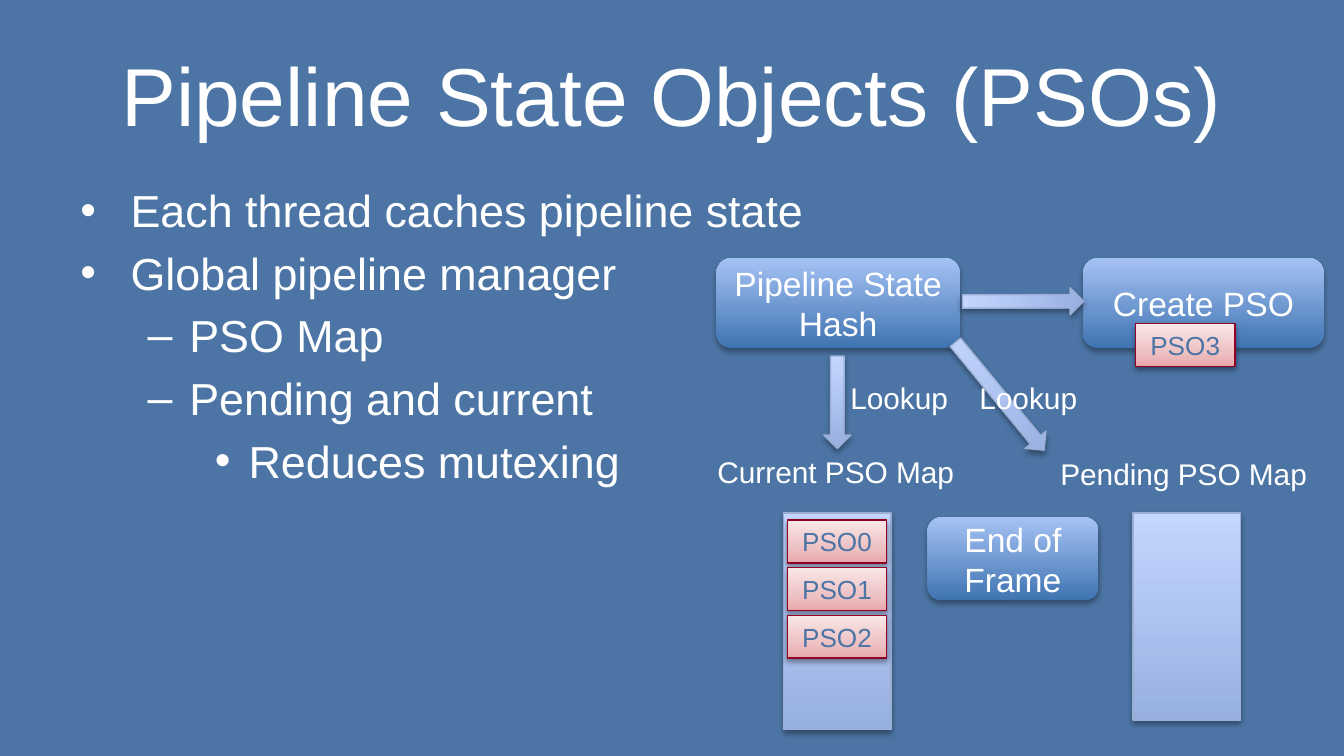
"""Build the slide on pipeline state objects and their lookup flow."""
from copy import deepcopy
from dataclasses import dataclass

from lxml.etree import SubElement
from pptx import Presentation
from pptx.dml.color import RGBColor
from pptx.enum.shapes import MSO_SHAPE as Preset
from pptx.enum.text import MSO_ANCHOR as Anchor, MSO_AUTO_SIZE as AutoSize, PP_ALIGN as Align
from pptx.oxml.ns import qn
from pptx.util import Cm, Pt


@dataclass(frozen=True)
class Look:
    stops: tuple
    line: str = ""
    text: str = "FFFFFF"
    size: int = 18
    shadow_alpha: int = 35
    shadow_distance: float = 1.8


@dataclass(frozen=True)
class Theme:
    font: str = "Arial"
    background: str = "4C75A5"
    text: str = "FFFFFF"
    title_size: int = 44
    body_size: int = 24
    label_size: int = 16
    step: Look = Look(((0, "3F74B2"), (1, "A5C2F4")))
    pale: Look = Look(((0, "98B0E0"), (1, "C4D6FF")), "9BAFD5")
    entry: Look = Look(((0, "E9A7AA"), (0.35, "EEC2C4"), (1, "F9E7E8")),
                       "920025", "4C75A5", 14, 38, 1.6)


THEME = Theme()
ENTRY_WIDTH, ENTRY_HEIGHT, ENTRY_PITCH = 1.88, 0.81, 0.9
OUTLINE = (
    ("Each thread caches pipeline state", 0),
    ("Global pipeline manager", 0),
    ("PSO Map", 1),
    ("Pending and current", 1),
    ("Reduces mutexing", 2),
)
BULLETS = (("•", 0.95, 0.95), ("–", 2.06, 0.79), ("•", 3.18, 0.64))


def write(paragraph, text, *, size, color=THEME.text, align=Align.LEFT):
    paragraph.alignment = align
    run = paragraph.add_run()
    run.text = text
    run.font.name = THEME.font
    run.font.size = Pt(size)
    run.font.color.rgb = RGBColor.from_string(color)


def add_text(slide, box, text, *, wrap=True, anchor=Anchor.TOP, grow=False, **style):
    frame = slide.shapes.add_textbox(*map(Cm, box)).text_frame
    frame.word_wrap = wrap
    frame.vertical_anchor = anchor
    if grow:
        frame.auto_size = AutoSize.SHAPE_TO_FIT_TEXT
    write(frame.paragraphs[0], text, **style)


def add_label(slide, box, text, wrap=False):
    add_text(slide, box, text, wrap=wrap, grow=True, size=THEME.label_size)


def set_bullet(paragraph, level):
    character, margin, hanging = BULLETS[level]
    paragraph.level = level
    properties = paragraph._p.get_or_add_pPr()
    properties.set("marL", str(Cm(margin)))
    properties.set("indent", str(-Cm(hanging)))
    spacing = SubElement(properties, qn("a:spcBef"))
    SubElement(spacing, qn("a:spcPct"), val="20000")
    SubElement(properties, qn("a:buFont"), typeface=THEME.font)
    SubElement(properties, qn("a:buChar"), char=character)


def add_outline(slide, box):
    frame = slide.shapes.add_textbox(*map(Cm, box)).text_frame
    frame.word_wrap = True
    for index, (text, level) in enumerate(OUTLINE):
        paragraph = frame.add_paragraph() if index else frame.paragraphs[0]
        set_bullet(paragraph, level)
        write(paragraph, text, size=THEME.body_size)


def fill_gradient(shape, stops):
    shape.fill.gradient()
    shape.fill.gradient_angle = 90
    stop_list = shape._element.spPr.find(qn("a:gradFill")).find(qn("a:gsLst"))
    for _ in stops[2:]:
        stop_list.append(deepcopy(stop_list[0]))
    for stop, (position, color) in zip(shape.fill.gradient_stops, stops):
        stop.position = position
        stop.color.rgb = RGBColor.from_string(color)


def add_shadow(shape, look):
    shape.shadow.inherit = False
    effects = shape._element.spPr.find(qn("a:effectLst"))
    shadow = SubElement(effects, qn("a:outerShdw"), blurRad=str(Pt(3.1)),
                        dist=str(Pt(look.shadow_distance)), dir="5400000", rotWithShape="0")
    color = SubElement(shadow, qn("a:srgbClr"), val="000000")
    SubElement(color, qn("a:alpha"), val=str(look.shadow_alpha * 1000))


def add_block(slide, preset, box, look, text="", rotation=0):
    shape = slide.shapes.add_shape(preset, *map(Cm, box))
    shape.rotation = rotation
    fill_gradient(shape, look.stops)
    if look.line:
        shape.line.color.rgb = RGBColor.from_string(look.line)
        shape.line.width = Pt(0.75)
    else:
        shape.line.fill.background()
    add_shadow(shape, look)
    if text:
        shape.text_frame.vertical_anchor = Anchor.MIDDLE
        write(shape.text_frame.paragraphs[0], text, size=look.size,
              color=look.text, align=Align.CENTER)


def add_step(slide, box, text):
    add_block(slide, Preset.FLOWCHART_ALTERNATE_PROCESS, box, THEME.step, text)


def add_map(slide, box):
    add_block(slide, Preset.FLOWCHART_PROCESS, box, THEME.pale)


def add_entry(slide, left, top, text):
    add_block(slide, Preset.FLOWCHART_PROCESS, (left, top, ENTRY_WIDTH, ENTRY_HEIGHT),
              THEME.entry, text)


def add_arrow(slide, box, rotation=0):
    add_block(slide, Preset.DOWN_ARROW, box, THEME.pale, rotation=rotation)


def main():
    presentation = Presentation()
    presentation.slide_width, presentation.slide_height = Cm(25.4), Cm(14.29)
    slide = presentation.slides.add_slide(presentation.slide_layouts[6])
    slide.background.fill.solid()
    slide.background.fill.fore_color.rgb = RGBColor.from_string(THEME.background)

    add_text(slide, (1.27, 0.58, 22.86, 2.39), "Pipeline State Objects (PSOs)",
             anchor=Anchor.MIDDLE, size=THEME.title_size, align=Align.CENTER)
    add_outline(slide, (1.27, 3.33, 22.86, 9.42))

    add_step(slide, (17.53, 9.78, 3.23, 1.57), "End of Frame")
    add_map(slide, (14.81, 9.7, 2.03, 4.09))
    add_label(slide, (19.79, 8.48, 5.23, 0.94), "Pending PSO Map")
    add_map(slide, (21.41, 9.7, 2.03, 3.91))
    add_label(slide, (13.31, 8.46, 5.05, 0.94), "Current PSO Map")
    for index in range(3):
        add_entry(slide, 14.88, 9.83 + index * ENTRY_PITCH, f"PSO{index}")

    add_step(slide, (13.54, 4.88, 4.6, 1.7), "Pipeline State Hash")
    add_step(slide, (20.47, 4.88, 4.55, 1.7), "Create PSO")
    add_arrow(slide, (15.57, 6.73, 0.51, 1.75))
    add_label(slide, (15.82, 7.05, 2.36, 0.94), "Lookup", wrap=True)
    add_arrow(slide, (19.08, 4.55, 0.51, 2.29), rotation=270)
    add_entry(slide, 21.46, 6.12, "PSO3")
    add_arrow(slide, (18.64, 6.17, 0.51, 2.64), rotation=320.6)
    add_label(slide, (18.26, 7.05, 2.36, 0.94), "Lookup", wrap=True)

    presentation.save("out.pptx")


if __name__ == "__main__":
    main()
